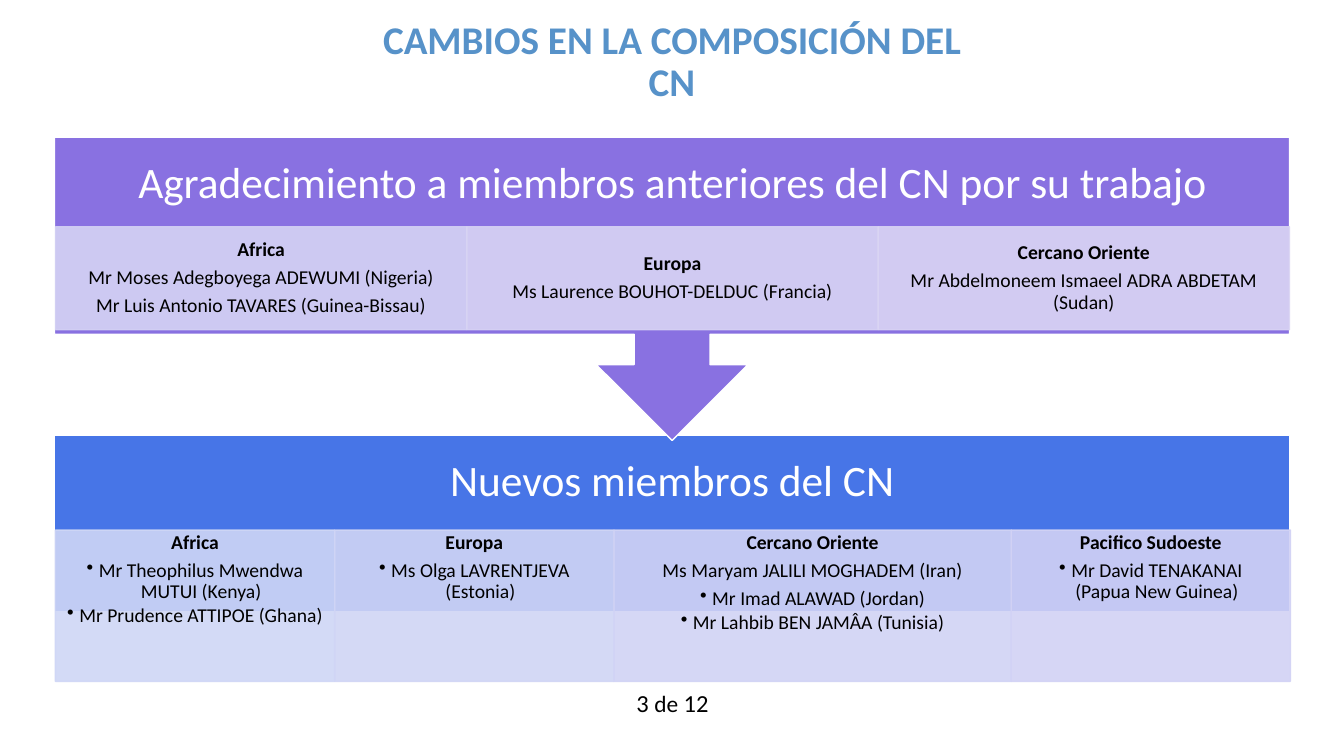
"""Build the slide on changes in the composition of the CN."""
from lxml import etree
from pptx import Presentation
from pptx.dml.color import RGBColor
from pptx.enum.shapes import MSO_SHAPE
from pptx.enum.text import MSO_ANCHOR, PP_ALIGN
from pptx.oxml.ns import qn
from pptx.util import Inches, Pt

RECT, CALLOUT = MSO_SHAPE.RECTANGLE, MSO_SHAPE.UP_ARROW_CALLOUT
TOP, MIDDLE = MSO_ANCHOR.TOP, MSO_ANCHOR.MIDDLE
CENTER = PP_ALIGN.CENTER
FONT = "Calibri"
COLORS = {"title": "5792C9", "purple": "8971E1", "blue": "4775E7",
          "white": "FFFFFF", "black": "000000"}
LEFT, WIDTH = 0.54, 12.25


def add_box(kind, x, y, w, h, color, line):
    sp = s.shapes.add_shape(kind, Inches(x), Inches(y), Inches(w), Inches(h))
    sp.shadow.inherit = False
    sp.fill.solid()
    sp.fill.fore_color.rgb = RGBColor.from_string(color)
    sp.line.color.rgb = RGBColor.from_string(line)
    sp.line.width = Pt(1)
    return sp


def write(sp, lines, size, color, anchor, inset_x, inset_y, bold_first=False):
    tf = sp.text_frame
    tf.word_wrap = True
    tf.vertical_anchor = anchor
    tf.margin_left = tf.margin_right = Inches(inset_x)
    tf.margin_top = tf.margin_bottom = Inches(inset_y)
    for i, line in enumerate(lines):
        p = tf.paragraphs[0] if i == 0 else tf.add_paragraph()
        bulleted = line.startswith("•")
        if bulleted:
            pPr = p._p.get_or_add_pPr()
            pPr.set("marL", str(Inches(0.12)))
            pPr.set("indent", str(-Inches(0.12)))
            etree.SubElement(pPr, qn("a:buChar")).set("char", "•")
        p.alignment = CENTER
        p.line_spacing = 0.9
        p.space_after = Pt(size * (0.15 if bulleted else 0.35))
        for j, part in enumerate(line.lstrip("•").split("\n")):
            if j:
                p.add_line_break()
            r = p.add_run()
            r.text = part
            r.font.name = FONT
            r.font.size = Pt(size)
            r.font.bold = bold_first and i == 0
            r.font.color.rgb = RGBColor.from_string(color)


prs = Presentation()
prs.slide_width, prs.slide_height = Inches(13.33), Inches(7.5)
s = prs.slides.add_slide(prs.slide_layouts[6])

title = s.shapes.add_textbox(Inches(3.58), Inches(0), Inches(6.17), Inches(1.25))
write(title, ["CAMBIOS EN LA COMPOSICIÓN DEL CN"], 28, COLORS["title"], MIDDLE,
      0.1, 0.05, bold_first=True)

add_box(RECT, LEFT, 4.32, WIDTH, 1.75, COLORS["blue"], COLORS["white"])
callout = add_box(CALLOUT, LEFT, 1.36, WIDTH, 3.01, COLORS["purple"], COLORS["white"])
callout.rotation = 180

headings = [
    ("Agradecimiento a miembros anteriores del CN por su trabajo", 1.36, 1.06, TOP),
    ("Nuevos miembros del CN", 4.32, 0.94, MIDDLE),
]
for text, y, h, anchor in headings:
    heading = s.shapes.add_textbox(Inches(LEFT), Inches(y), Inches(WIDTH), Inches(h))
    write(heading, [text], 31, COLORS["white"], anchor, 0.24, 0.24)

bands = [
    (2.25, 1.02, MIDDLE, [
        (4.08, "D5D3F4", ["Africa", "Mr Moses Adegboyega ADEWUMI (Nigeria)",
                          "Mr Luis Antonio TAVARES (Guinea-Bissau)"]),
        (4.08, "D8D4F4", ["Europa", "Ms Laurence BOUHOT-DELDUC (Francia)"]),
        (4.08, "DAD5F4", ["Cercano Oriente",
                          "Mr Abdelmoneem Ismaeel ADRA ABDETAM (Sudan)"]),
    ]),
    (5.26, 1.5, TOP, [
        (2.77, "CFD6F6", ["Africa", "•Mr Theophilus Mwendwa MUTUI (Kenya)",
                          "•Mr Prudence ATTIPOE (Ghana)"]),
        (2.77, "D0D5F5", ["Europa", "•Ms Olga LAVRENTJEVA (Estonia)"]),
        (3.94, "D1D3F5", ["Cercano Oriente", "Ms Maryam JALILI MOGHADEM (Iran)",
                          "•Mr Imad ALAWAD (Jordan)",
                          "•Mr Lahbib BEN JAMÂA (Tunisia)"]),
        (2.77, "D2D2F5", ["Pacifico Sudoeste",
                          "•Mr David TENAKANAI\n(Papua New Guinea)"]),
    ]),
]
for y, h, anchor, regions in bands:
    x = 0.55
    for w, color, lines in regions:
        region = add_box(RECT, x, y, w, h, color, color)
        for clr in region._element.spPr.iter(qn("a:srgbClr")):
            etree.SubElement(clr, qn("a:alpha")).set("val", "90000")
        write(region, lines, 14, COLORS["black"], anchor, 0.11, 0.02, bold_first=True)
        x += w

page = s.shapes.add_textbox(Inches(6.05), Inches(6.75), Inches(1.24), Inches(0.46))
tf = page.text_frame
tf.word_wrap = False
tf.margin_left = tf.margin_right = Inches(0.17)
tf.margin_top = tf.margin_bottom = Inches(0.08)
p = tf.paragraphs[0]
p.alignment = CENTER
for text, size in [("3 ", 17.5), ("de", 16.7), (" 12", 17.5)]:
    r = p.add_run()
    r.text = text
    r.font.name = FONT
    r.font.size = Pt(size)
    r.font.color.rgb = RGBColor.from_string(COLORS["black"])

prs.save("out.pptx")
